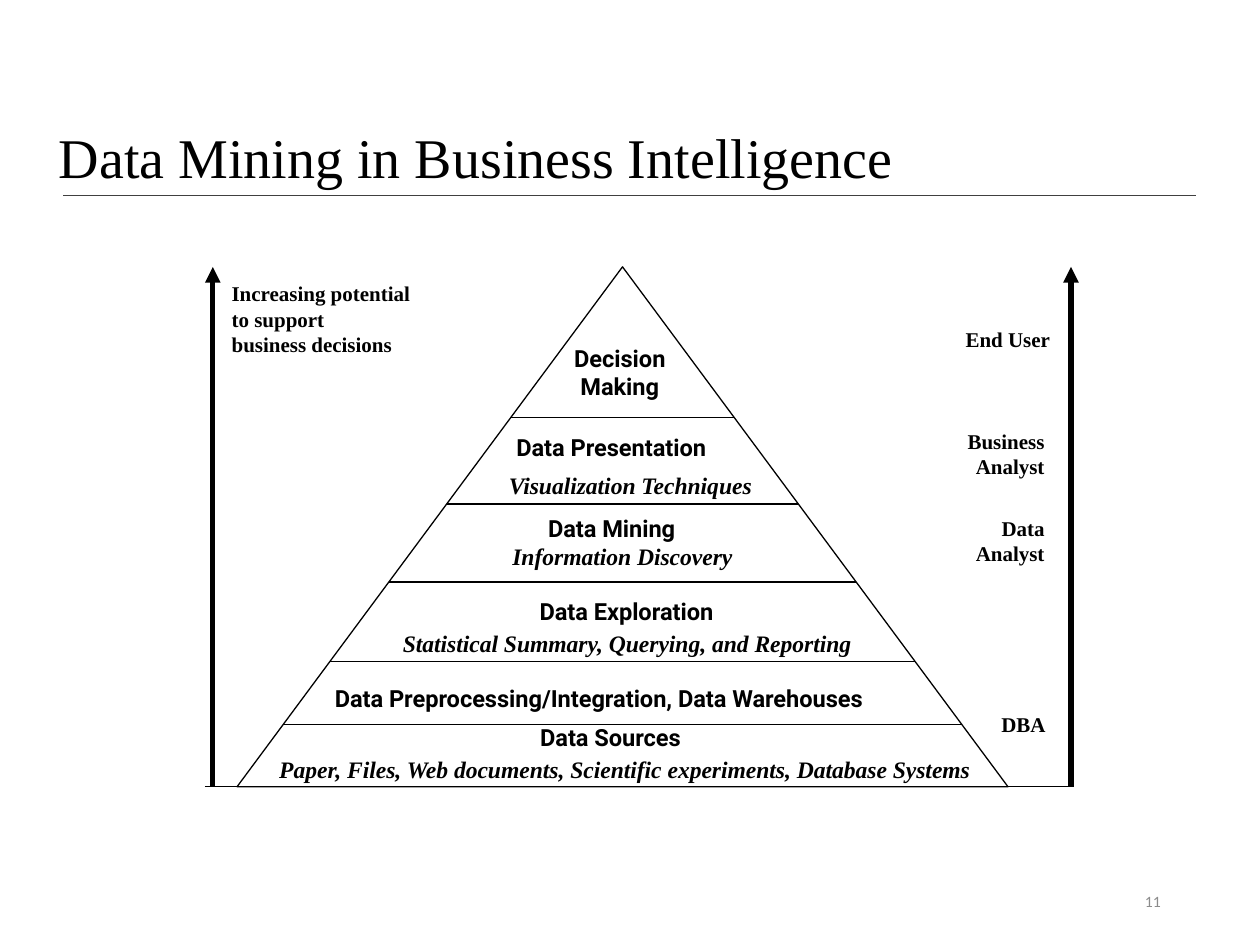
import pptx
import pptx.util
import pptx.dml.color
import pptx.enum.shapes
import pptx.enum.text
import pptx.oxml.ns
from dataclasses import dataclass
from lxml import etree

Cm = pptx.util.Cm
Pt = pptx.util.Pt
Align = pptx.enum.text.PP_ALIGN
Anchor = pptx.enum.text.MSO_ANCHOR


@dataclass(frozen=True)
class Theme:
    ink: str = "000000"
    rule: str = "404040"
    gray: str = "8C8C8C"
    serif: str = "Times New Roman"
    sans: str = "Roboto"
    foot: str = "Calibri"
    head: float = 32
    role: float = 12
    tier: float = 13.5
    page: float = 9
    thin: float = 0.75
    thick: float = 3


THEME = Theme()
LEFT, TOP, WIDE, HIGH = 4.78, 5.38, 15.54, 10.48  # pyramid
BASE = TOP + HIGH
CUTS = (8.41, 10.16, 11.73, 13.34, 14.61)  # heights of the tier lines
AXES = (4.29, 21.59)

# text, left, top, width, height
ROLES = (
    ("End User", 19.18, 6.45, 2.24, 0.76),
    ("Business\nAnalyst", 19.2, 8.51, 2.11, 1.27),
    ("Data\nAnalyst", 19.38, 10.26, 1.93, 1.27),
    ("DBA", 19.91, 14.22, 1.42, 0.76),
)
# text, left, top, width, wrap, alignment
TIERS = (
    ("Decision Making", 11.1, 6.81, 2.79, True, Align.CENTER),
    ("Data Presentation", 10.16, 8.61, 4.9, False, None),
    ("Data Mining", 10.8, 10.24, 3.71, True, None),
    ("Data Exploration", 10.19, 11.91, 4.88, True, Align.CENTER),
    ("Data Preprocessing/Integration, Data Warehouses",
     6.5, 13.67, 12.83, False, None),
    ("Data Sources", 10.64, 14.45, 3.71, False, None),
)
NOTES = (
    ("Visualization Techniques", 10.01, 9.37, 5.49, False, None),
    ("Information Discovery", 10.08, 10.8, 5, False, None),
    ("Statistical Summary, Querying, and Reporting",
     7.87, 12.55, 10.59, True, None),
    ("Paper, Files, Web documents, Scientific experiments, Database Systems",
     5.38, 15.09, 14.83, True, None),
)


def color(code):
    return pptx.dml.color.RGBColor.from_string(code)


def add_text(slide, text, box, size, face, tint=THEME.ink, bold=False,
             slant=False, align=None, wrap=False, grow=True):
    shape = slide.shapes.add_textbox(*(Cm(v) for v in box))
    frame = shape.text_frame
    frame.text = text
    frame.word_wrap = wrap
    if grow:
        frame.auto_size = pptx.enum.text.MSO_AUTO_SIZE.SHAPE_TO_FIT_TEXT
    else:
        frame.vertical_anchor = Anchor.MIDDLE
    for para in frame.paragraphs:
        para.alignment = align
        font = para.font
        font.size, font.name = Pt(size), face
        font.bold, font.italic = bold, slant
        font.color.rgb = color(tint)
    return frame


def add_line(slide, start, end, width=THEME.thin, tint=THEME.ink, arrow=False):
    kind = pptx.enum.shapes.MSO_CONNECTOR.STRAIGHT
    line = slide.shapes.add_connector(kind, *(Cm(v) for v in start + end))
    line.line.color.rgb = color(tint)
    line.line.width = Pt(width)
    qn = pptx.oxml.ns.qn
    if arrow:
        etree.SubElement(line.line._get_or_add_ln(), qn("a:tailEnd"),
                         type="triangle")
    etree.SubElement(line._element.spPr, qn("a:effectLst"))


def add_head(slide):
    add_line(slide, (1.27, 3.94), (24.1, 3.94), 1, THEME.rule)
    frame = add_text(slide, "Data Mining in Business Intelligence",
                     (0.99, 2.67, 22.78, 1.12), THEME.head, THEME.serif,
                     wrap=True, grow=False)
    frame.margin_left = frame.margin_right = Cm(0.2)
    frame.margin_top = frame.margin_bottom = Cm(0.1)
    frame.paragraphs[0].line_spacing = 0.9


def add_cone(slide):
    """Draw the pyramid and cut it into tiers that follow its slope."""
    cone = slide.shapes.add_shape(
        pptx.enum.shapes.MSO_SHAPE.FLOWCHART_EXTRACT,
        Cm(LEFT), Cm(TOP), Cm(WIDE), Cm(HIGH))
    cone.shadow.inherit = False
    cone.fill.background()
    cone.line.color.rgb = color(THEME.ink)
    cone.line.width = Pt(THEME.thin)
    mid = LEFT + WIDE / 2
    for y in CUTS:
        half = WIDE / 2 * (y - TOP) / HIGH
        add_line(slide, (mid - half, y), (mid + half, y))


def add_axes(slide):
    for x in AXES:
        add_line(slide, (x, BASE), (x, TOP), THEME.thick, arrow=True)
    add_line(slide, (4.13, BASE), (AXES[1], BASE))


def add_roles(slide):
    add_text(slide, "Increasing potential\nto support\nbusiness decisions",
             (4.42, 5.54, 4.14, 1.8), THEME.role, THEME.serif, bold=True)
    for text, *box in ROLES:
        add_text(slide, text, box, THEME.role, THEME.serif, bold=True,
                 align=Align.RIGHT)


def add_tiers(slide):
    for rows, face, slant in ((TIERS, THEME.sans, False),
                              (NOTES, THEME.serif, True)):
        for text, x, y, width, wrap, align in rows:
            add_text(slide, text, (x, y, width, 0.84), THEME.tier, face,
                     bold=True, slant=slant, align=align, wrap=wrap)


def main():
    deck = pptx.Presentation()
    deck.slide_width, deck.slide_height = Cm(25.4), Cm(19.05)
    slide = deck.slides.add_slide(deck.slide_layouts[6])
    add_head(slide)
    add_cone(slide)
    add_axes(slide)
    add_roles(slide)
    add_tiers(slide)
    add_text(slide, "11", (17.93, 17.65, 5.72, 1.02), THEME.page, THEME.foot,
             THEME.gray, align=Align.RIGHT, wrap=True, grow=False)
    deck.save("out.pptx")


if __name__ == "__main__":
    main()
